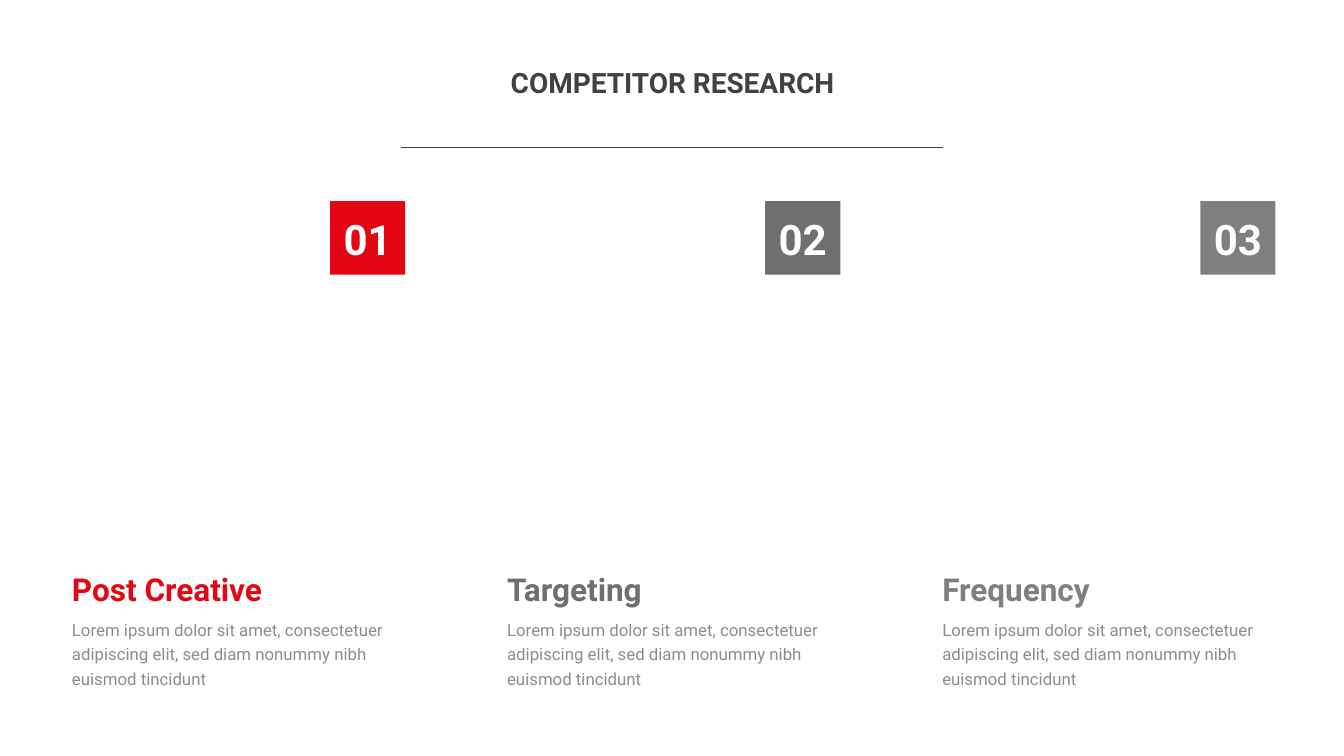
from lxml import etree
from pptx import Presentation
from pptx.dml.color import RGBColor
from pptx.enum.shapes import MSO_CONNECTOR, MSO_SHAPE
from pptx.enum.text import MSO_ANCHOR, MSO_AUTO_SIZE, PP_ALIGN
from pptx.oxml.ns import qn
from pptx.util import Inches, Pt

LEFT, CENTER = PP_ALIGN.LEFT, PP_ALIGN.CENTER
TOP, GROW = MSO_ANCHOR.TOP, MSO_AUTO_SIZE.SHAPE_TO_FIT_TEXT
RECTANGLE, STRAIGHT = MSO_SHAPE.RECTANGLE, MSO_CONNECTOR.STRAIGHT

# Content
TITLE = "COMPETITOR RESEARCH"
BODY = ("Lorem ipsum dolor sit amet, consectetuer adipiscing elit, "
        "sed diam nonummy nibh euismod tincidunt")
COLUMNS = [("01", "Post Creative", "red"),
           ("02", "Targeting", "gray"),
           ("03", "Frequency", "light_gray")]

COLORS = {"red": "E30613", "gray": "706F6F", "light_gray": "7F7F7F",
          "dark": "414141", "white": "FFFFFF"}

# Text formats
TITLE_STYLE = {"size": Pt(40), "bold": True}
NUMBER_STYLE = {"size": Pt(60), "bold": True}
HEADING_STYLE = {"size": Pt(45), "bold": True}
BODY_STYLE = {"size": Pt(24), "bold": False}

# Column grid, in inches
COLUMN_LEFT, COLUMN_STEP, COLUMN_WIDTH = 1.33, 8.635, 7.03
SQUARE_OFFSET, SQUARE_WIDTH, SQUARE_HEIGHT = 5.22, 1.49, 1.46
NUMBER_WIDTH = 1.27


def rgb(name):
    return RGBColor.from_string(COLORS[name])


def write(box, area, text, style, color, align=LEFT, spacing=1.0, opacity=100):
    """Place a text shape and fill it with one formatted paragraph."""
    box.left, box.top, box.width, box.height = map(Inches, area)
    frame = box.text_frame
    frame.word_wrap = True
    frame.auto_size = GROW
    frame.vertical_anchor = TOP
    para = frame.paragraphs[0]
    para.alignment = align
    para.line_spacing = spacing
    span = para.add_run()
    span.text = text
    span.font.name = "Roboto"
    for key, value in style.items():
        setattr(span.font, key, value)
    span.font.color.rgb = rgb(color)
    if opacity < 100:
        for fill in span.font._element.iter(qn("a:srgbClr")):
            etree.SubElement(fill, qn("a:alpha"), val=str(opacity * 1000))


def add_text(page, area, *args, **options):
    write(page.shapes.add_textbox(0, 0, 0, 0), area, *args, **options)


def add_column(page, index, number, heading, color):
    left = COLUMN_LEFT + index * COLUMN_STEP
    square_left = left + SQUARE_OFFSET

    # Numbered square
    square = page.shapes.add_shape(
        RECTANGLE, Inches(square_left), Inches(3.99),
        Inches(SQUARE_WIDTH), Inches(SQUARE_HEIGHT))
    square.shadow.inherit = False
    square.fill.solid()
    square.fill.fore_color.rgb = rgb(color)
    square.line.fill.background()
    number_left = square_left + (SQUARE_WIDTH - NUMBER_WIDTH) / 2
    add_text(page, (number_left, 4.18, NUMBER_WIDTH, 1.11), number,
             NUMBER_STYLE, "white", align=CENTER)

    # Heading and description
    add_text(page, (left, 11.26, COLUMN_WIDTH, 0.86), heading,
             HEADING_STYLE, color)
    add_text(page, (left, 12.17, COLUMN_WIDTH, 1.56), BODY,
             BODY_STYLE, "dark", spacing=1.2, opacity=60)


def main():
    deck = Presentation()
    deck.slide_width, deck.slide_height = Inches(26.67), Inches(15)
    page = deck.slides.add_slide(deck.slide_layouts[5])

    # Title and rule
    write(page.shapes.title, (4.47, 1.11, 17.75, 0.82), TITLE,
          TITLE_STYLE, "dark", align=CENTER, spacing=1.2)
    rule = page.shapes.add_connector(
        STRAIGHT, Inches(7.96), Inches(2.92), Inches(18.71), Inches(2.92))
    rule.line.color.rgb = rgb("dark")
    rule.line.width = Pt(0.5)
    etree.SubElement(rule._element.spPr, qn("a:effectLst"))

    for index, column in enumerate(COLUMNS):
        add_column(page, index, *column)

    deck.save("out.pptx")


if __name__ == "__main__":
    main()
